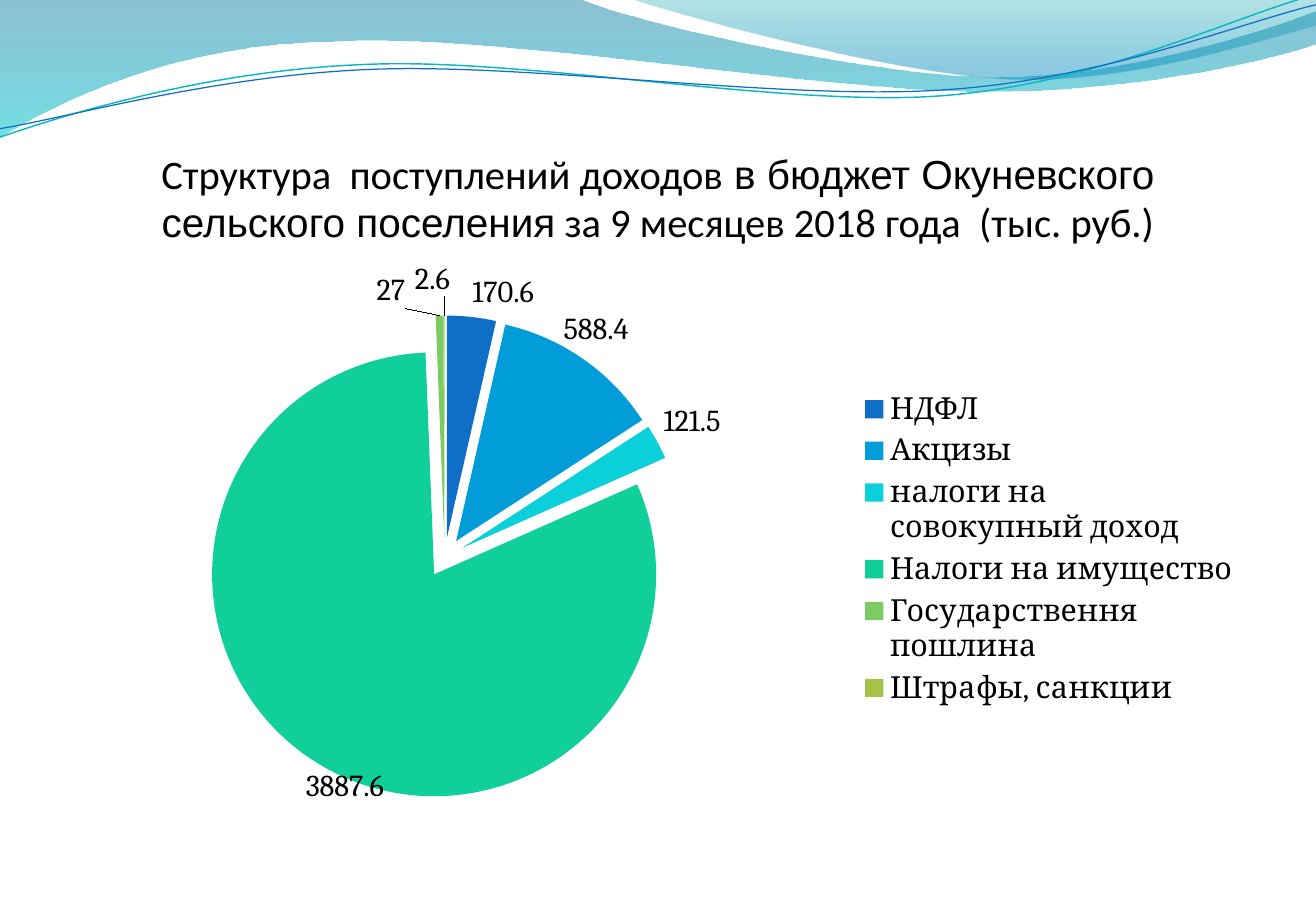
from lxml import etree
from pptx import Presentation
from pptx.chart.data import CategoryChartData
from pptx.dml.color import RGBColor
from pptx.enum.chart import XL_CHART_TYPE, XL_LABEL_POSITION, XL_LEGEND_POSITION
from pptx.enum.text import MSO_ANCHOR, PP_ALIGN
from pptx.oxml import parse_xml
from pptx.oxml.ns import nsdecls, qn
from pptx.util import Cm, Pt

PIE = XL_CHART_TYPE.PIE
BEST = XL_LABEL_POSITION.BEST_FIT
RIGHT = XL_LEGEND_POSITION.RIGHT
BOTTOM = MSO_ANCHOR.BOTTOM
CENTER = PP_ALIGN.CENTER

COLORS = {
    "black": "000000", "navy": "0074A1", "aqua": "00C6CF",
    "sea": "00A1A9", "sky": "008BBF", "teal": "0AB8BF",
    "blue": "0F6FC6", "azure": "009DD9", "cyan": "0BD0D9",
    "mint": "10CF9B", "green": "7CCA62", "olive": "A5C249",
}

# Wave outlines in cm: two numbers make a line, six a Bezier curve
BAND = [(0, 0), (12.12, -0.03), (13.08, 0.43, 18.26, 1.6, 20.88, 1.6),
        (23.47, 1.6, 26.37, 0.66, 27.51, 0.23), (27.53, 0.91),
        (27.05, 1.12, 23.93, 1.93, 20.52, 1.91),
        (17.12, 1.91, 10.52, 0.71, 7.09, 0.86),
        (3.56, 0.91, 1.27, 2.11, -0.03, 2.87)]
SHEEN = [(13.18, -0.03), (14.02, 0.28, 18.77, 1.57, 21.16, 1.65),
         (23.55, 1.75, 26.47, 0.81, 27.51, 0.53), (27.51, 0)]
UPPER = [(0, 2.87), (1.32, 2.41, 4.34, 1.47, 7.62, 1.35),
         (10.87, 1.19, 16.31, 2.24, 19.61, 2.01),
         (22.91, 1.78, 25.83, 0.33, 27.46, -0.1)]
LOWER = [(0, 2.69), (1.3, 2.49, 4.5, 1.57, 7.8, 1.45),
         (11.07, 1.32, 16.43, 2.11, 19.71, 1.88),
         (23.01, 1.68, 25.91, 0.48, 27.51, 0.1)]

TITLE = [("Структура  поступлений доходов", "Calibri"),
         (" в бюджет Окуневского сельского поселения", "Arial"),
         (" за 9 месяцев 2018 года  (тыс. руб.)", "Calibri")]

# Income type, value, slice colour, label shift as a share of the chart
INCOME = [("НДФЛ", 170.6, "blue", None),
          ("Акцизы", 588.4, "azure", (-0.02, -0.01)),
          ("налоги на совокупный доход", 121.5, "cyan", None),
          ("Налоги на имущество", 3887.6, "mint", (0.06, 0)),
          ("Государствення пошлина", 27, "green", None),
          ("Штрафы, санкции", 2.6, "olive", (-0.01, -0.02))]


def color(name):
    return RGBColor.from_string(COLORS[name])


def layout(inner=False, **parts):
    """Make a manual chart layout from shares of the chart size."""
    xml = '<c:layoutTarget val="inner"/>' if inner else ""
    if "w" in parts:
        xml += '<c:xMode val="edge"/><c:yMode val="edge"/>'
    xml += "".join(f'<c:{k} val="{v}"/>' for k, v in parts.items())
    return parse_xml(f'<c:layout {nsdecls("c")}><c:manualLayout>{xml}'
                     '</c:manualLayout></c:layout>')


class Deck:
    def __init__(self, width, height):
        self.prs = Presentation()
        self.prs.slide_width, self.prs.slide_height = Cm(width), Cm(height)
        self.font, self.size, self.ink = "Cambria", Pt(18), "black"

    def add(self):
        self.slide = self.prs.slides.add_slide(self.prs.slide_layouts[5])

    def outline(self, path, close):
        pts = [(Cm(seg[i]), Cm(seg[i + 1]))
               for seg in path for i in range(0, len(seg), 2)]
        pen = self.slide.shapes.build_freeform(*pts[0])
        pen.add_line_segments(pts[1:], close=close)
        shape = pen.convert_to_shape()
        shape.shadow.inherit = False
        # Join each three line ends of a curve into one Bezier
        ends = iter(list(shape.element.iter(qn("a:lnTo"))))
        for seg in path[1:]:
            first = next(ends)
            if len(seg) == 6:
                first.tag = qn("a:cubicBezTo")
                for end in (next(ends), next(ends)):
                    first.append(end[0])
                    end.getparent().remove(end)
        return shape

    def wave(self, path, stops):
        shape = self.outline(path, True)
        shape.line.fill.background()
        shape.fill.gradient()
        shape.fill.gradient_angle = 270
        for stop, (place, name, _) in zip(shape.fill.gradient_stops, stops):
            stop.position = place
            stop.color.rgb = color(name)
        tints = list(shape.element.iter(qn("a:srgbClr")))
        for tint, (_, _, alpha) in zip(tints, stops):
            etree.SubElement(tint, qn("a:alpha")).set("val", str(alpha * 1000))

    def line(self, path, name, width):
        shape = self.outline(path, False)
        shape.fill.background()
        shape.line.color.rgb = color(name)
        shape.line.width = Pt(width)

    def title(self, runs, x, y, w, h):
        box = self.slide.shapes.title
        box.left, box.top, box.width, box.height = Cm(x), Cm(y), Cm(w), Cm(h)
        frame = box.text_frame
        frame.word_wrap = True
        frame.vertical_anchor = BOTTOM
        frame.margin_left = frame.margin_right = frame.margin_bottom = 0
        frame.margin_top = Cm(0.13)
        para = frame.paragraphs[0]
        para.alignment = CENTER
        for text, font in runs:
            run = para.add_run()
            run.text = text
            run.font.name, run.font.size = font, Pt(24)
            run.font.color.rgb = color(self.ink)

    def pie(self, rows, x, y, w, h):
        data = CategoryChartData()
        data.categories = [row[0] for row in rows]
        data.add_series("Series 1", [row[1] for row in rows])
        chart = self.slide.shapes.add_chart(
            PIE, Cm(x), Cm(y), Cm(w), Cm(h), data).chart
        chart.has_title = False
        chart.font.name, chart.font.size = self.font, self.size
        chart.font.color.rgb = color(self.ink)
        plot = chart.plots[0]
        plot.vary_by_categories = True
        series = plot.series[0]

        # Slices and labels
        labels = series.data_labels
        labels.show_value = True
        labels.position = BEST
        for i, (_, _, name, shift) in enumerate(rows):
            point = series.points[i]
            point.format.fill.solid()
            point.format.fill.fore_color.rgb = color(name)
            if shift:
                point.data_label.position = BEST
        shifts = [row[3] for row in rows if row[3]]
        for label, (dx, dy) in zip(chart.element.iter(qn("c:dLbl")), shifts):
            label.insert(1, layout(x=dx, y=dy))
        burst = parse_xml(f'<c:explosion {nsdecls("c")} val="9"/>')
        next(chart.element.iter(qn("c:dPt"))).addprevious(burst)

        # Plot and legend places
        area = next(chart.element.iter(qn("c:plotArea")))
        for old in area.findall(qn("c:layout")):
            area.remove(old)
        area.insert(0, layout(True, x=0.11, y=0.1, w=0.42, h=0.83))
        chart.has_legend = True
        chart.legend.position = RIGHT
        chart.legend.include_in_layout = False
        spot = next(chart.element.iter(qn("c:legendPos")))
        for old in spot.getparent().findall(qn("c:layout")):
            spot.getparent().remove(old)
        spot.addnext(layout(x=0.67, y=0.22, w=0.32, h=0.56))


def main():
    deck = Deck(27.51, 19.05)
    deck.add()
    # Waves along the top
    deck.wave(BAND, [(0, "navy", 45), (1, "aqua", 55)])
    deck.wave(SHEEN, [(0, "sea", 30), (0.8, "sky", 45)])
    deck.line(UPPER, "teal", 0.85)
    deck.line(LOWER, "blue", 0.75)
    # Title and income chart
    deck.title(TITLE, 1.37, 1.96, 24.77, 3.18)
    deck.pie(INCOME, 1.37, 5.38, 24.77, 12.19)
    deck.prs.save("out.pptx")


if __name__ == "__main__":
    main()
